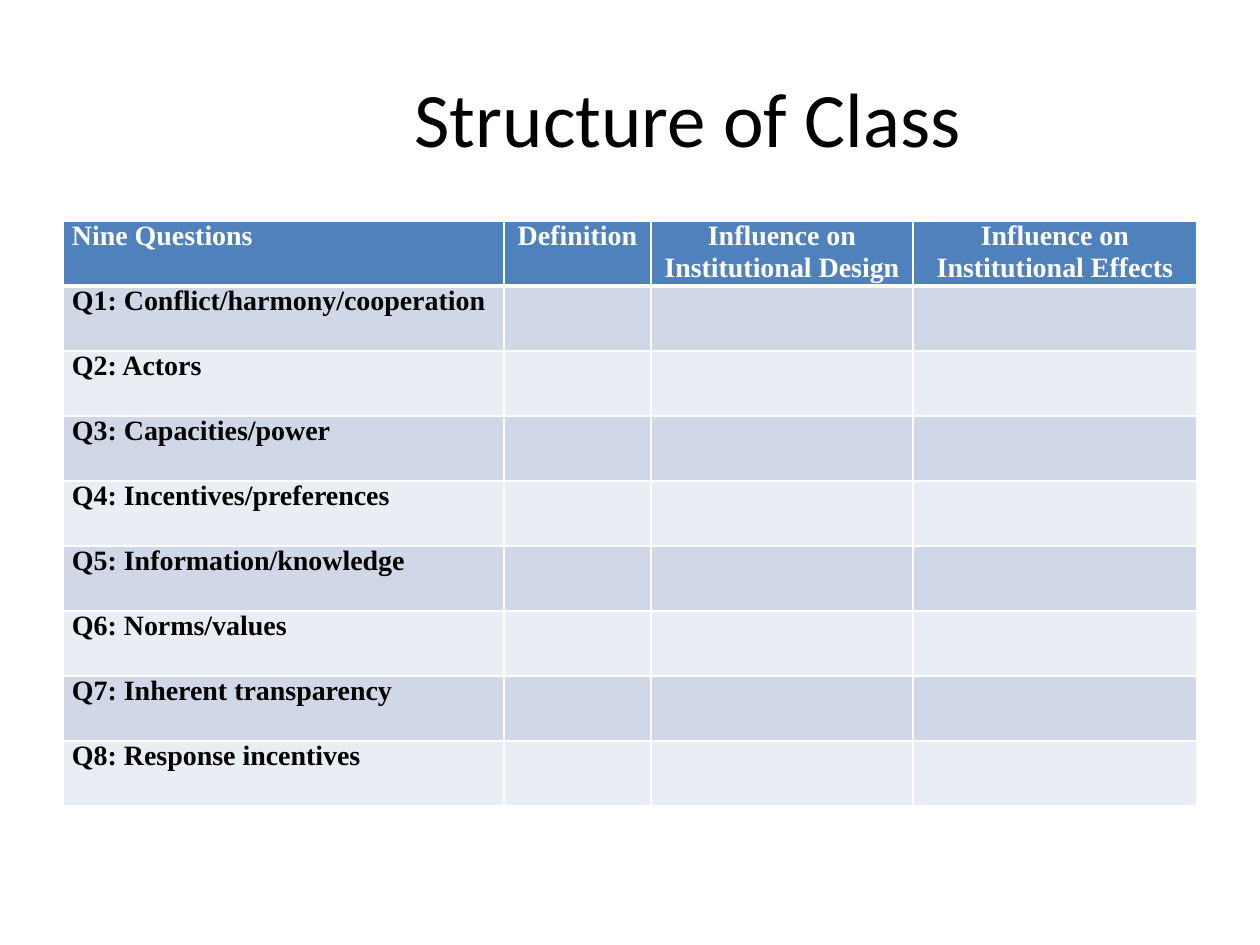
"""Build the class structure slide: a title above a table of guiding questions."""
from dataclasses import dataclass

from lxml import etree
from pptx import Presentation
from pptx.dml.color import RGBColor
from pptx.enum.text import MSO_ANCHOR, PP_ALIGN
from pptx.oxml.ns import qn
from pptx.slide import Slide
from pptx.table import Table, _Cell
from pptx.util import Emu, Pt

CENTER, LEFT = PP_ALIGN.CENTER, PP_ALIGN.LEFT
MIDDLE, TOP = MSO_ANCHOR.MIDDLE, MSO_ANCHOR.TOP
TITLE_ONLY = 5
PX_PER_INCH = 126


@dataclass(frozen=True)
class Theme:
    title_font: str = "Calibri"
    table_font: str = "Times New Roman"
    title_size: int = 44
    table_size: int = 16
    text: str = "000000"
    header_text: str = "FFFFFF"
    header_fill: str = "4F81BD"
    bands: tuple[str, str] = ("D0D8E8", "E9EDF4")
    border: str = "FFFFFF"
    thin: int = 1
    thick: int = 3


@dataclass(frozen=True)
class Column:
    heading: str
    width: int
    align: PP_ALIGN = CENTER


THEME = Theme()
ROW_HEIGHT = 65
CELL_MARGIN = 9
COLUMNS = (
    Column("Nine Questions", 441, LEFT),
    Column("Definition", 147),
    Column("Influence on Institutional Design", 262),
    Column("Influence on Institutional Effects", 284),
)
QUESTIONS = (
    "Conflict/harmony/cooperation",
    "Actors",
    "Capacities/power",
    "Incentives/preferences",
    "Information/knowledge",
    "Norms/values",
    "Inherent transparency",
    "Response incentives",
)


def px(length: int) -> Emu:
    """Turn pixels into EMU."""
    return Emu(round(length * 914400 / PX_PER_INCH))


def set_borders(cell: _Cell, bottom: int) -> None:
    """Outline a cell, with its own width for the bottom edge."""
    properties = cell._tc.get_or_add_tcPr()
    widths = {"a:lnL": THEME.thin, "a:lnR": THEME.thin, "a:lnT": THEME.thin, "a:lnB": bottom}
    for position, (tag, width) in enumerate(widths.items()):
        line = etree.Element(qn(tag), w=str(Pt(width)))
        fill = etree.SubElement(line, qn("a:solidFill"))
        etree.SubElement(fill, qn("a:srgbClr"), val=THEME.border)
        properties.insert(position, line)


def style_cell(cell: _Cell, fill: str, bottom: int = THEME.thin) -> None:
    """Give a cell its fill, margins and borders."""
    cell.fill.solid()
    cell.fill.fore_color.rgb = RGBColor.from_string(fill)
    cell.margin_left = cell.margin_right = px(CELL_MARGIN)
    cell.margin_top = cell.margin_bottom = 0
    cell.vertical_anchor = TOP
    set_borders(cell, bottom)


def write_cell(cell: _Cell, text: str, color: str, align: PP_ALIGN) -> None:
    """Write bold table text into a cell."""
    cell.text = text
    para = cell.text_frame.paragraphs[0]
    para.alignment = align
    para.font.name = THEME.table_font
    para.font.size = Pt(THEME.table_size)
    para.font.bold = True
    para.font.color.rgb = RGBColor.from_string(color)


def add_title(slide: Slide, text: str) -> None:
    """Fill and place the title placeholder."""
    title = slide.shapes.title
    title.left, title.top, title.width, title.height = map(px, (179, 38, 1018, 158))
    title.text_frame.text = text
    title.text_frame.vertical_anchor = MIDDLE
    para = title.text_frame.paragraphs[0]
    para.alignment = CENTER
    para.font.name = THEME.title_font
    para.font.size = Pt(THEME.title_size)
    para.font.color.rgb = RGBColor.from_string(THEME.text)


def fill_header(table: Table) -> None:
    """Size the columns and write their headings."""
    for index, column in enumerate(COLUMNS):
        table.columns[index].width = px(column.width)
        cell = table.cell(0, index)
        style_cell(cell, THEME.header_fill, THEME.thick)
        write_cell(cell, column.heading, THEME.header_text, column.align)


def fill_questions(table: Table) -> None:
    """Write one banded row for each question."""
    for number, question in enumerate(QUESTIONS, start=1):
        band = THEME.bands[(number - 1) % len(THEME.bands)]
        for index in range(len(COLUMNS)):
            style_cell(table.cell(number, index), band)
        write_cell(table.cell(number, 0), f"Q{number}: {question}", THEME.text, LEFT)


def add_question_table(slide: Slide) -> None:
    """Add the table of questions."""
    row_count = len(QUESTIONS) + 1
    width = sum(column.width for column in COLUMNS)
    frame = slide.shapes.add_table(
        row_count, len(COLUMNS), px(63), px(221), px(width), px(row_count * ROW_HEIGHT)
    )
    for row in frame.table.rows:
        row.height = px(ROW_HEIGHT)
    fill_header(frame.table)
    fill_questions(frame.table)


def main() -> None:
    """Build and save the deck."""
    deck = Presentation()
    deck.slide_width, deck.slide_height = px(1260), px(945)
    slide = deck.slides.add_slide(deck.slide_layouts[TITLE_ONLY])
    add_title(slide, "Structure of Class")
    add_question_table(slide)
    deck.save("out.pptx")


if __name__ == "__main__":
    main()
